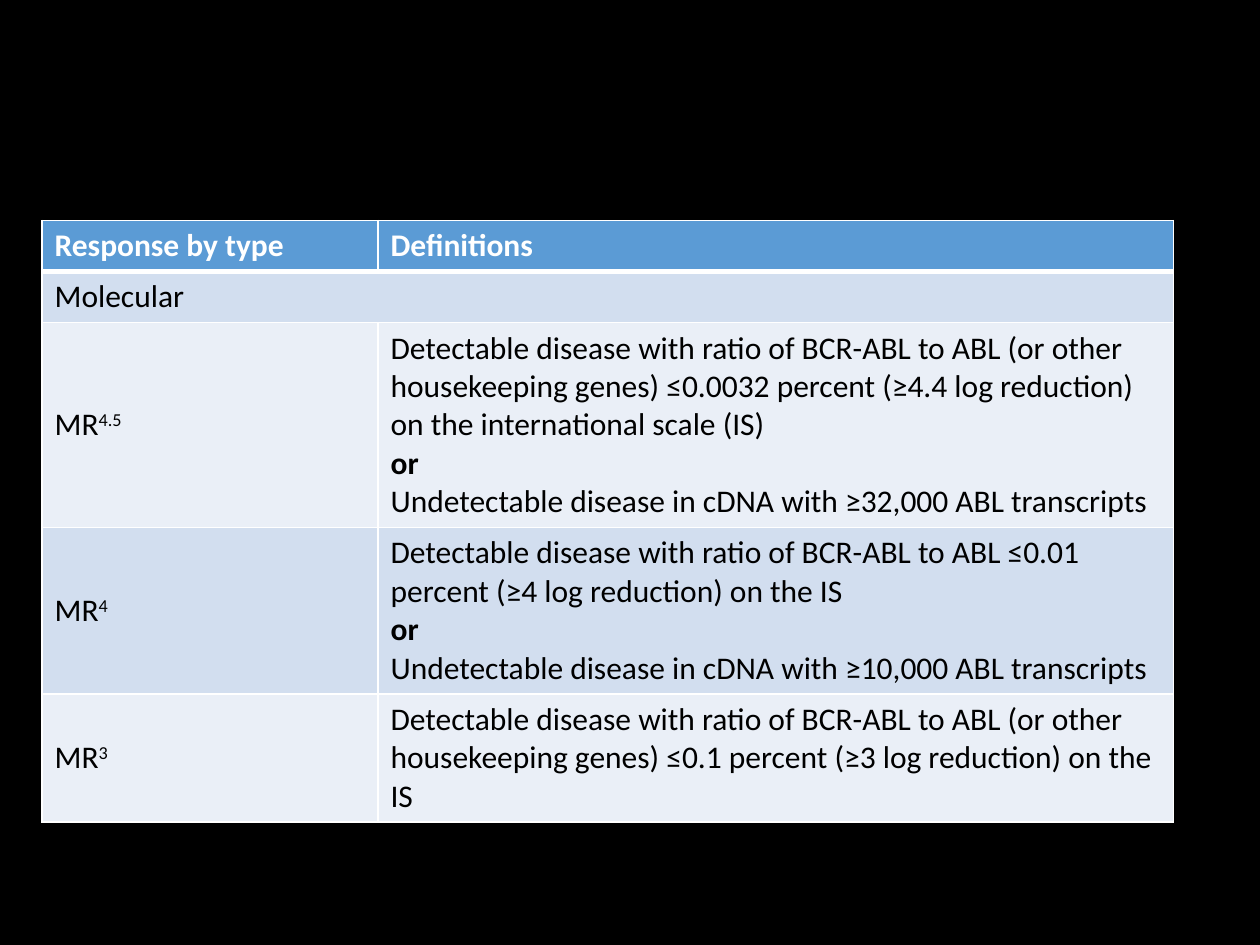
"""Build a slide with a table of molecular response definitions."""
import pptx
import pptx.dml.color
import pptx.enum.text
import pptx.oxml
import pptx.oxml.ns
import pptx.util

Pt = pptx.util.Pt


def color(value):
    return pptx.dml.color.RGBColor.from_string(value)


def add_border(cell, side, width):
    cell._tc.get_or_add_tcPr().append(pptx.oxml.parse_xml(
        f'<a:ln{side} {pptx.oxml.ns.nsdecls("a")} w="{Pt(width)}"><a:solidFill>'
        f'<a:srgbClr val="FFFFFF"/></a:solidFill></a:ln{side}>'))


rows = [
    (29, "5B9BD5", "Response by type", "", ["Definitions"]),
    (29, "D2DEEF", "Molecular", "", []),
    (115, "EAEFF7", "MR", "4.5", [
        "Detectable disease with ratio of BCR-ABL to ABL (or other housekeeping genes) "
        "≤0.0032 percent (≥4.4 log reduction) on the international scale (IS)",
        "or",
        "Undetectable disease in cDNA with ≥32,000 ABL transcripts"]),
    (94, "D2DEEF", "MR", "4", [
        "Detectable disease with ratio of BCR-ABL to ABL ≤0.01 percent "
        "(≥4 log reduction) on the IS",
        "or",
        "Undetectable disease in cDNA with ≥10,000 ABL transcripts"]),
    (72, "EAEFF7", "MR", "3", [
        "Detectable disease with ratio of BCR-ABL to ABL (or other housekeeping genes) "
        "≤0.1 percent (≥3 log reduction) on the IS"]),
]
column_widths = [192, 454.5]

presentation = pptx.Presentation()
presentation.slide_width = Pt(720)
presentation.slide_height = Pt(540)
slide = presentation.slides.add_slide(presentation.slide_layouts[6])
slide.background.fill.solid()
slide.background.fill.fore_color.rgb = color("000000")

table = slide.shapes.add_table(
    len(rows), len(column_widths), Pt(24), Pt(126),
    Pt(sum(column_widths)), Pt(sum(row[0] for row in rows))).table
for column, width in zip(table.columns, column_widths):
    column.width = Pt(width)

for row_index, (height, fill, label, exponent, definitions) in enumerate(rows):
    table.rows[row_index].height = Pt(height)
    label_cell, definition_cell = table.rows[row_index].cells
    label_cell.text = label
    if exponent:
        run = label_cell.text_frame.paragraphs[0].add_run()
        run.text = exponent
        run._r.get_or_add_rPr().set("baseline", "30000")
    definition_cell.text = "\n".join(definitions)
    if not definitions:
        label_cell.merge(definition_cell)

    is_header = row_index == 0
    for cell in (label_cell, definition_cell):
        cell.vertical_anchor = pptx.enum.text.MSO_ANCHOR.MIDDLE
        for side in "LRTB":
            heavy = (side == "B" and is_header) or (side == "T" and row_index == 1)
            add_border(cell, side, 3 if heavy else 1)
        cell.fill.solid()
        cell.fill.fore_color.rgb = color(fill)
        for paragraph in cell.text_frame.paragraphs:
            paragraph.font.name = "Calibri"
            paragraph.font.size = Pt(18)
            paragraph.font.bold = is_header or paragraph.text == "or"
            paragraph.font.color.rgb = color("FFFFFF" if is_header else "000000")

presentation.save("out.pptx")
